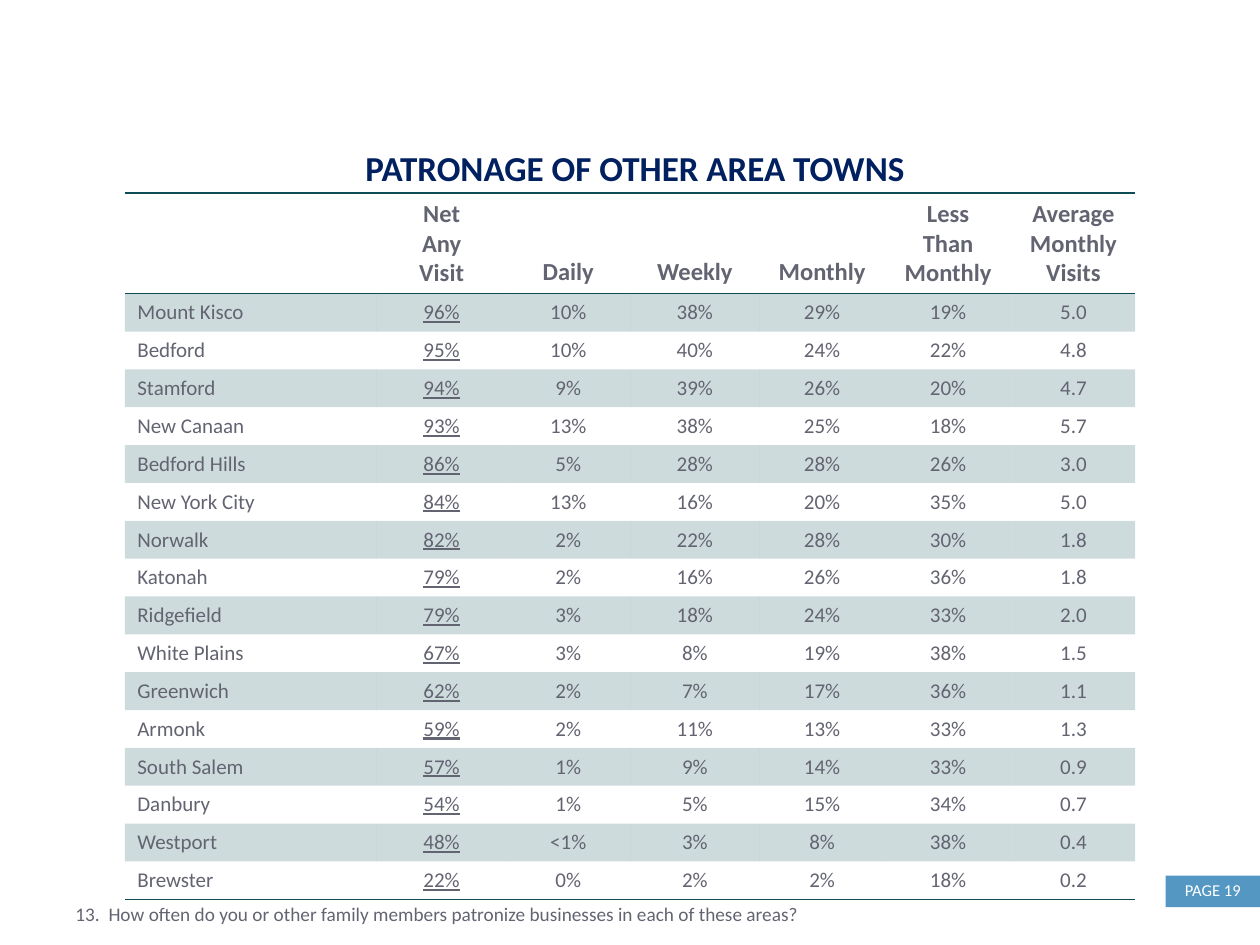
"""Build the slide on patronage of other area towns."""
from lxml.etree import SubElement
from pptx import Presentation
from pptx.dml.color import RGBColor
from pptx.enum.shapes import MSO_SHAPE
from pptx.enum.text import MSO_ANCHOR as Anchor, PP_ALIGN as Align
from pptx.oxml.ns import qn
from pptx.util import Inches, Pt

NAVY = RGBColor(0x00, 0x20, 0x60)
GRAY = RGBColor(0x63, 0x64, 0x71)
TEAL = RGBColor(0x0B, 0x4C, 0x55)
BLUE = RGBColor(0x53, 0x97, 0xC2)
WHITE = RGBColor(0xFF, 0xFF, 0xFF)
FONT = "Calibri"
NO_STYLE = "{2D5ABB26-0587-4C30-8999-92F81FD0307C}"

TITLE = "PATRONAGE OF OTHER AREA TOWNS"
QUESTION = "13.  How often do you or other family members patronize businesses in each of these areas?"
PAGE = "PAGE 19"
HEADERS = [[], ["Net", "Any", "Visit"], ["Daily"], ["Weekly"], ["Monthly"],
           ["Less", "Than Monthly"], ["Average Monthly Visits"]]
TOWNS = [
    ("Mount Kisco", "96%", "10%", "38%", "29%", "19%", "5.0"),
    ("Bedford", "95%", "10%", "40%", "24%", "22%", "4.8"),
    ("Stamford", "94%", "9%", "39%", "26%", "20%", "4.7"),
    ("New Canaan", "93%", "13%", "38%", "25%", "18%", "5.7"),
    ("Bedford Hills", "86%", "5%", "28%", "28%", "26%", "3.0"),
    ("New York City", "84%", "13%", "16%", "20%", "35%", "5.0"),
    ("Norwalk", "82%", "2%", "22%", "28%", "30%", "1.8"),
    ("Katonah", "79%", "2%", "16%", "26%", "36%", "1.8"),
    ("Ridgefield", "79%", "3%", "18%", "24%", "33%", "2.0"),
    ("White Plains", "67%", "3%", "8%", "19%", "38%", "1.5"),
    ("Greenwich", "62%", "2%", "7%", "17%", "36%", "1.1"),
    ("Armonk", "59%", "2%", "11%", "13%", "33%", "1.3"),
    ("South Salem", "57%", "1%", "9%", "14%", "33%", "0.9"),
    ("Danbury", "54%", "1%", "5%", "15%", "34%", "0.7"),
    ("Westport", "48%", "<1%", "3%", "8%", "38%", "0.4"),
    ("Brewster", "22%", "0%", "2%", "2%", "18%", "0.2"),
]
COLUMN_WIDTHS = [2, 1.03, 0.98, 1.03, 0.99, 1.01, 0.98]
HEADER_HEIGHT, ROW_HEIGHT = 0.79, 0.3


def write(frame, lines, size, color, align=Align.LEFT, bold=False, underline=False):
    for index, line in enumerate(lines):
        paragraph = frame.add_paragraph() if index else frame.paragraphs[0]
        paragraph.alignment = align
        run = paragraph.add_run()
        run.text = line
        font = run.font
        font.name, font.size, font.bold = FONT, Pt(size), bold
        font.underline = underline
        font.color.rgb = color


def add_text(slide, box, text, size, color, **style):
    frame = slide.shapes.add_textbox(*map(Inches, box)).text_frame
    frame.word_wrap = True
    write(frame, [text], size, color, **style)
    return frame


def add_border(cell, side):
    line = SubElement(cell._tc.get_or_add_tcPr(), qn(f"a:{side}"), w=str(Pt(1)))
    fill = SubElement(line, qn("a:solidFill"))
    SubElement(fill, qn("a:srgbClr"), val=str(TEAL))


def shade(cell):
    cell.fill.solid()
    cell.fill.fore_color.rgb = TEAL
    color = cell._tc.tcPr.find(qn("a:solidFill")).find(qn("a:srgbClr"))
    SubElement(color, qn("a:alpha"), val="20000")


def add_town_table(slide):
    height = HEADER_HEIGHT + ROW_HEIGHT * len(TOWNS)
    box = map(Inches, (0.99, 1.53, sum(COLUMN_WIDTHS), height))
    table = slide.shapes.add_table(len(TOWNS) + 1, len(HEADERS), *box).table
    table.first_row = table.horz_banding = False
    table._tbl.tblPr.find(qn("a:tableStyleId")).text = NO_STYLE
    for column, width in zip(table.columns, COLUMN_WIDTHS):
        column.width = Inches(width)
    for index, row in enumerate(table.rows):
        row.height = Inches(ROW_HEIGHT if index else HEADER_HEIGHT)

    for index, header in enumerate(HEADERS):
        cell = table.cell(0, index)
        cell.vertical_anchor = Anchor.BOTTOM
        write(cell.text_frame, header, 14, GRAY, Align.CENTER, bold=True)
        add_border(cell, "lnT")
        add_border(cell, "lnB")
        cell.fill.background()

    for row_index, town in enumerate(TOWNS, 1):
        for index, value in enumerate(town):
            cell = table.cell(row_index, index)
            align = Align.CENTER if index else Align.LEFT
            write(cell.text_frame, [value], 12, GRAY, align, underline=index == 1)
            if row_index == len(TOWNS):
                add_border(cell, "lnB")
            if row_index % 2:
                shade(cell)
            else:
                cell.fill.background()


def main():
    presentation = Presentation()
    presentation.slide_width, presentation.slide_height = Inches(10), Inches(7.5)
    slide = presentation.slides.add_slide(presentation.slide_layouts[6])

    page_tab = slide.shapes.add_shape(MSO_SHAPE.RECTANGLE, *map(Inches, (9.25, 6.95, 0.75, 0.25)))
    page_tab.shadow.inherit = False
    page_tab.fill.solid()
    page_tab.fill.fore_color.rgb = BLUE
    page_tab.line.fill.background()
    page_label = add_text(slide, (9.25, 6.86, 0.75, 0.4), PAGE, 9.5, WHITE, align=Align.CENTER)
    page_label.vertical_anchor = Anchor.MIDDLE

    add_text(slide, (0.58, 1.11, 8.92, 0.44), TITLE, 20, NAVY, align=Align.CENTER, bold=True)
    add_text(slide, (0.5, 7.11, 5.99, 0.29), QUESTION, 11, GRAY)
    add_town_table(slide)
    presentation.save("out.pptx")


if __name__ == "__main__":
    main()
